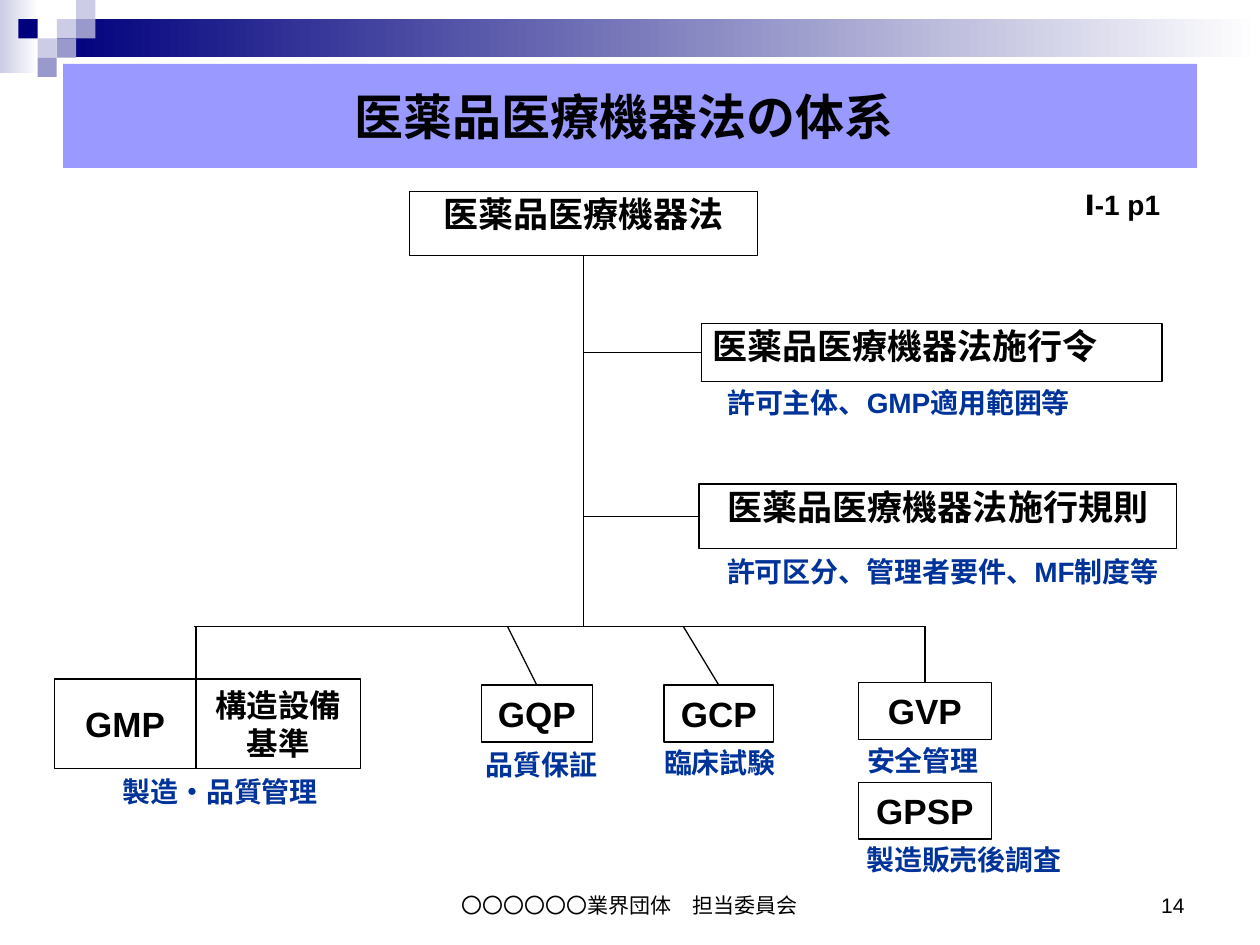
"""Build a slide that shows the structure of the pharmaceutical and medical device law."""
from pptx import Presentation
from pptx.dml.color import RGBColor
from pptx.enum.shapes import MSO_CONNECTOR, MSO_SHAPE
from pptx.enum.text import MSO_ANCHOR, MSO_AUTO_SIZE, PP_ALIGN
from pptx.oxml.ns import qn
from pptx.util import Pt

RECTANGLE, STRAIGHT = MSO_SHAPE.RECTANGLE, MSO_CONNECTOR.STRAIGHT
LEFT, CENTER, RIGHT = PP_ALIGN.LEFT, PP_ALIGN.CENTER, PP_ALIGN.RIGHT
TOP, MIDDLE, BOTTOM = MSO_ANCHOR.TOP, MSO_ANCHOR.MIDDLE, MSO_ANCHOR.BOTTOM
NO_AUTOFIT = MSO_AUTO_SIZE.NONE
SITE_TOP, SITE_LEFT, SITE_BOTTOM = 0, 1, 2

THEME = {
    "font": "Arial",
    "black": "000000", "white": "FFFFFF", "note": "003399", "title_fill": "9999FF",
    "navy": "00007D", "pale": "CCCCE6", "mid": "9999CC",
    "title": 28, "box": 20, "small_box": 18, "label": 16, "footer": 12,
    "line": 0.75,
}
TIGHT = (6, 0.75, 6, 0.75)
NORMAL = (7.2, 3.6, 7.2, 3.6)

TITLE = ("医薬品医療機器法の体系", (36, 36.5, 648, 59.5))
BANDS = [((0, 0, 22, 42), "pale"), ((32.5, 11, 687.5, 21.5), "navy")]
SQUARE, SQUARE_LEFT = 11, 10.5
SQUARES = [(2, 1, "pale"), (3, 0, "pale"), (3, 1, "mid"), (1, 2, "pale"),
           (0, 1, "navy"), (2, 2, "mid"), (1, 3, "mid")]
BOXES = {
    "law": ("医薬品医療機器法", (234, 109.5, 199, 36.5), CENTER, TOP, "box"),
    "order": ("医薬品医療機器法施行令", (401, 185, 263, 33), LEFT, TOP, "box"),
    "rules": ("医薬品医療機器法施行規則", (399.5, 276.5, 273, 37), CENTER, TOP, "box"),
    "gmp": ("GMP", (31, 388, 81, 51), CENTER, MIDDLE, "box"),
    "facility": ("構造設備基準", (112, 388, 94, 51), CENTER, MIDDLE, "small_box"),
    "gqp": ("GQP", (275, 391.5, 63.5, 32.5), CENTER, MIDDLE, "box"),
    "gcp": ("GCP", (379.5, 391.5, 62.5, 32.5), CENTER, MIDDLE, "box"),
    "gvp": ("GVP", (490.5, 390, 76, 32.5), CENTER, MIDDLE, "box"),
    "gpsp": ("GPSP", (490.5, 447, 76, 32.5), CENTER, MIDDLE, "box"),
}
NOTES = [
    ("許可主体、GMP適用範囲等", (409.5, 219.5, 273, 32.5)),
    ("許可区分、管理者要件、MF制度等", (409.5, 316, 308, 32.5)),
    ("製造・品質管理", (64, 442, 174, 22.5)),
    ("品質保証", (271.5, 426.5, 114, 27)),
    ("臨床試験", (373.5, 425.5, 117, 22.5)),
    ("安全管理", (489.5, 424, 122, 22)),
    ("製造販売後調査", (489, 481, 155.5, 22)),
]
REFERENCE = ("Ⅰ-1 p1", (568, 103.5, 116, 26.5))
FOOTERS = [
    ("〇〇〇〇〇〇業界団体　担当委員会", (246, 492, 228, 36), CENTER),
    ("14", (516, 492, 168, 36), RIGHT),
]
BUS_Y, BUS_LEFT, BUS_RIGHT = 358, 111, 529
SIDE_BRANCHES = ["order", "rules"]
LOWER_BRANCHES = [("gqp", 290), ("gcp", 390.5), ("gvp", 528.5)]


def color(name):
    return RGBColor.from_string(THEME[name])


def apply(target, values):
    for name, value in values.items():
        setattr(target, name, value)


def lengths(numbers):
    return [Pt(number) for number in numbers]


def write_text(shape, text, size, ink="black", align=LEFT, anchor=TOP, insets=TIGHT, bold=True):
    frame = shape.text_frame
    margins = zip(("margin_left", "margin_top", "margin_right", "margin_bottom"), lengths(insets))
    apply(frame, {"word_wrap": True, "auto_size": NO_AUTOFIT, "vertical_anchor": anchor, **dict(margins)})
    paragraph = frame.paragraphs[0]
    paragraph.alignment = align
    run = paragraph.add_run()
    run.text = text
    apply(run.font, {"name": THEME["font"], "size": Pt(THEME[size]), "bold": bold})
    run.font.color.rgb = color(ink)


def add_rectangle(slide, place, fill=None):
    shape = slide.shapes.add_shape(RECTANGLE, *lengths(place))
    shape.shadow.inherit = False
    if fill:
        shape.fill.solid()
        shape.fill.fore_color.rgb = color(fill)
        shape.line.fill.background()
    else:
        shape.fill.background()
        shape.line.color.rgb = color("black")
        shape.line.width = Pt(THEME["line"])
    return shape


def add_label(slide, text, place, size, **style):
    write_text(slide.shapes.add_textbox(*lengths(place)), text, size, **style)


def add_line(slide, start, end):
    connector = slide.shapes.add_connector(STRAIGHT, *lengths((*start, *end)))
    connector.line.color.rgb = color("black")
    connector.line.width = Pt(THEME["line"])
    properties = connector._element.spPr
    properties.append(properties.makeelement(qn("a:effectLst"), {}))
    return connector


def add_decoration(slide):
    for place, start in BANDS:
        band = add_rectangle(slide, place, start)
        band.fill.gradient()
        band.fill.gradient_angle = 0
        for stop, name in zip(band.fill.gradient_stops, (start, "white")):
            stop.color.rgb = color(name)
    for column, row, fill in SQUARES:
        place = (SQUARE_LEFT + column * SQUARE, row * SQUARE, SQUARE, SQUARE)
        add_rectangle(slide, place, fill)


def add_title(slide):
    text, place = TITLE
    title = slide.shapes.title
    apply(title, dict(zip(("left", "top", "width", "height"), lengths(place))))
    title.fill.solid()
    title.fill.fore_color.rgb = color("title_fill")
    write_text(title, text, "title", align=CENTER, anchor=MIDDLE, insets=(7.2, 3.6, 14, 3.6))


def add_boxes(slide):
    shapes = {}
    for name, (text, place, align, anchor, size) in BOXES.items():
        shapes[name] = add_rectangle(slide, place)
        write_text(shapes[name], text, size, align=align, anchor=anchor)
    return shapes


def add_lines(slide, shapes):
    left, top, width, height = BOXES["law"][1]
    trunk_x = left + width / 2
    trunk = add_line(slide, (trunk_x, top + height), (trunk_x, BUS_Y))
    trunk.begin_connect(shapes["law"], SITE_BOTTOM)
    add_line(slide, (BUS_LEFT, BUS_Y), (BUS_RIGHT, BUS_Y))
    for name in SIDE_BRANCHES:
        left, top, width, height = BOXES[name][1]
        middle = top + height / 2
        branch = add_line(slide, (trunk_x, middle), (left, middle))
        branch.end_connect(shapes[name], SITE_LEFT)
    for name, start_x in LOWER_BRANCHES:
        left, top, width, height = BOXES[name][1]
        branch = add_line(slide, (start_x, BUS_Y), (left + width / 2, top))
        branch.end_connect(shapes[name], SITE_TOP)
    facility_left, facility_top = BOXES["facility"][1][:2]
    add_line(slide, (facility_left, BUS_Y), (facility_left, facility_top))


def main():
    presentation = Presentation()
    apply(presentation, {"slide_width": Pt(720), "slide_height": Pt(540)})
    slide = presentation.slides.add_slide(presentation.slide_layouts[5])
    add_decoration(slide)
    add_title(slide)
    add_lines(slide, add_boxes(slide))
    for text, place in NOTES:
        add_label(slide, text, place, "label", ink="note")
    add_label(slide, *REFERENCE, "label", align=RIGHT, insets=(7.2, 3.6, 21, 3.6))
    for text, place, align in FOOTERS:
        add_label(slide, text, place, "footer", align=align, anchor=BOTTOM, insets=NORMAL, bold=False)
    presentation.save("out.pptx")


if __name__ == "__main__":
    main()
